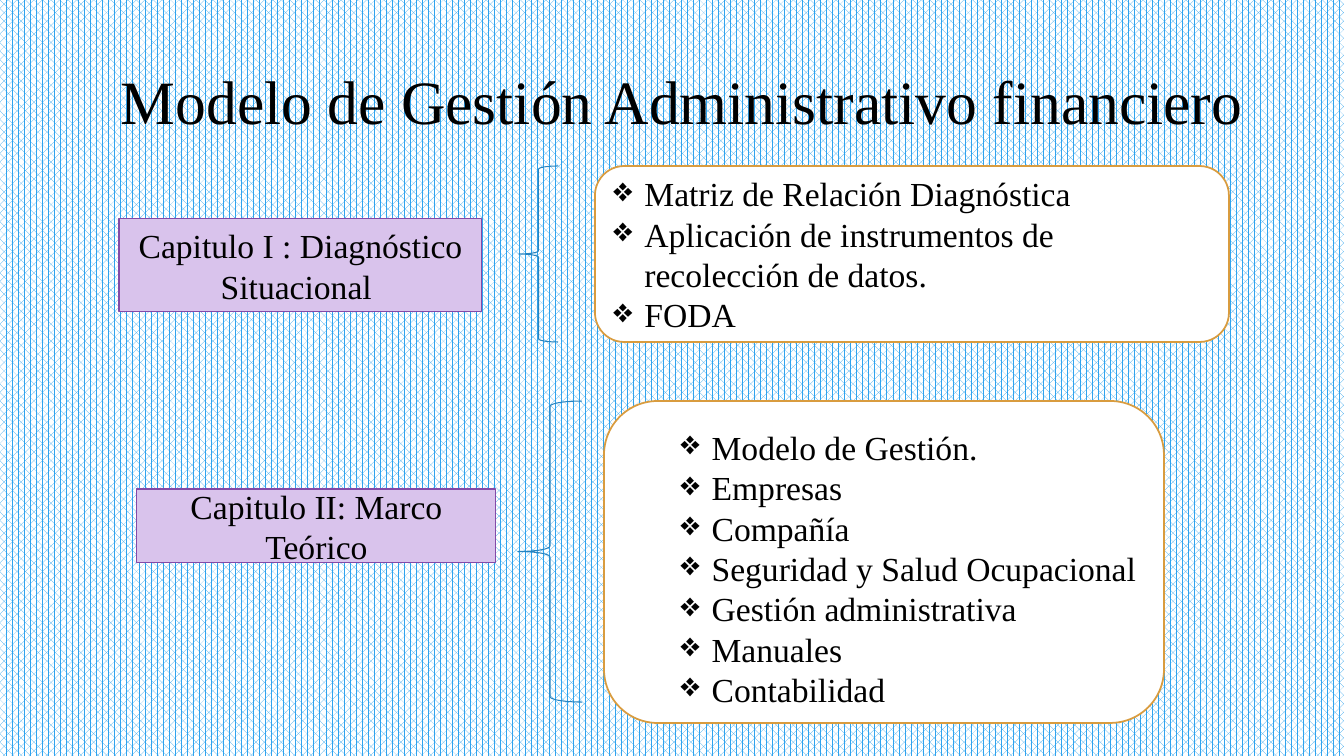
from lxml.etree import SubElement
from pptx import Presentation
from pptx.dml.color import RGBColor
from pptx.enum.dml import MSO_PATTERN
from pptx.enum.shapes import MSO_SHAPE
from pptx.enum.text import MSO_ANCHOR, PP_ALIGN
from pptx.oxml.ns import qn
from pptx.util import Emu, Pt

COLORS = {
    "ink": "000000",
    "white": "FFFFFF",
    "stripe": "2FA3EE",
    "lilac": "D9C3EC",
    "purple": "834AA7",
    "blue": "2683BF",
    "gold": "D99C3F",
}
FONT = "Times New Roman"


def px(count):
    return Emu(round(count * 914400 / 100.8))


def color(name):
    return RGBColor.from_string(COLORS[name])


def write(frame, lines, size=24, align=PP_ALIGN.CENTER, bullet=None, indent=0, hang=0):
    for place, line in enumerate(lines):
        para = frame.add_paragraph() if place else frame.paragraphs[0]
        para.alignment = align
        if bullet:
            props = para._p.get_or_add_pPr()
            props.set("marL", str(px(indent)))
            props.set("indent", str(-px(hang)))
            SubElement(props, qn("a:buChar")).set("char", bullet)
        run = para.add_run()
        run.text = line
        run.font.name = FONT
        run.font.size = Pt(size)
        run.font.color.rgb = color("ink")


class Board:
    def __init__(self, deck):
        self.slide = deck.slides.add_slide(deck.slide_layouts[6])
        self.shapes = self.slide.shapes

    def paint(self):
        fill = self.slide.background.fill
        fill.patterned()
        fill.pattern = MSO_PATTERN.PERCENT_60
        fill.fore_color.rgb = color("stripe")
        fill.back_color.rgb = color("white")

    def title(self, text, area):
        frame = self.shapes.add_textbox(*map(px, area)).text_frame
        frame.word_wrap = False
        write(frame, [text], size=44)

    def shape(self, kind, area, line, width=0.75, fill=None):
        item = self.shapes.add_shape(kind, *map(px, area))
        item.shadow.inherit = False
        if fill:
            item.fill.solid()
            item.fill.fore_color.rgb = color(fill)
        else:
            item.fill.background()
        item.line.color.rgb = color(line)
        item.line.width = Pt(width)
        item.text_frame.word_wrap = True
        item.text_frame.vertical_anchor = MSO_ANCHOR.MIDDLE
        return item

    def label(self, text, area):
        item = self.shape(MSO_SHAPE.RECTANGLE, area, "purple", fill="lilac")
        write(item.text_frame, [text])

    def brace(self, area):
        self.shape(MSO_SHAPE.LEFT_BRACE, area, "blue")

    def panel(self, lines, area, indent, top=5, bottom=5):
        item = self.shape(MSO_SHAPE.ROUNDED_RECTANGLE, area, "gold", 1.25, "white")
        frame = item.text_frame
        frame.margin_top, frame.margin_bottom = px(top), px(bottom)
        write(frame, lines, align=PP_ALIGN.LEFT, bullet="❖", indent=indent, hang=31)


def main():
    deck = Presentation()
    deck.slide_width, deck.slide_height = px(1344), px(756)
    board = Board(deck)
    board.paint()
    board.title("Modelo de Gestión Administrativo financiero", (106, 58, 1153, 85))
    board.label("Capitulo I : Diagnóstico Situacional ", (119, 219, 363, 93))
    board.label("Capitulo II: Marco Teórico", (137, 489, 359, 74))
    board.brace((519, 166, 39, 176))
    board.brace((518, 401, 64, 301))
    board.panel(
        [
            "Matriz de Relación Diagnóstica",
            "Aplicación de instrumentos de recolección de datos.",
            "FODA",
        ],
        (595, 166, 634, 176),
        indent=31,
    )
    board.panel(
        [
            "Modelo de Gestión.",
            "Empresas",
            "Compañía",
            "Seguridad y Salud Ocupacional",
            "Gestión administrativa",
            "Manuales",
            "Contabilidad",
        ],
        (604, 401, 560, 322),
        indent=82,
        top=12,
        bottom=0,
    )
    deck.save("out.pptx")


if __name__ == "__main__":
    main()
